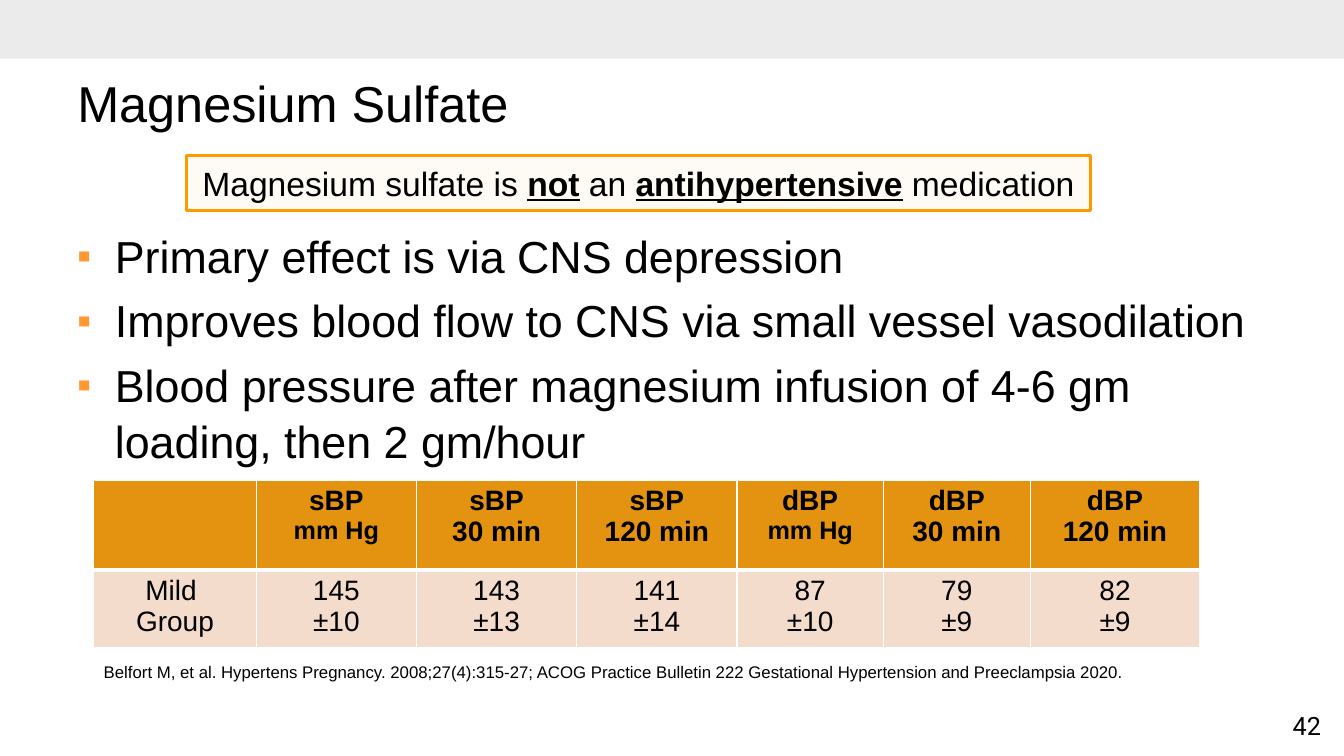
"""Build the Magnesium Sulfate slide."""
from typing import NamedTuple

from lxml import etree
from pptx import Presentation
from pptx.dml.color import RGBColor
from pptx.enum.shapes import MSO_SHAPE
from pptx.enum.text import MSO_ANCHOR, PP_ALIGN
from pptx.oxml.ns import qn
from pptx.util import Pt

RECT = MSO_SHAPE.RECTANGLE
MIDDLE = MSO_ANCHOR.MIDDLE
LEFT, CENTER = PP_ALIGN.LEFT, PP_ALIGN.CENTER

BLACK, WHITE = "000000", "FFFFFF"
BAND, CALLOUT_FILL, CALLOUT_LINE = "E3E3E3", "FEEDD0", "FF9900"
BULLET, HEAD_FILL, ROW_FILL = "FF9932", "E39310", "F4DCCC"


class Box(NamedTuple):
    left: float
    top: float
    width: float
    height: float

    def emu(self) -> list:
        """Return the four lengths as Pt values."""
        return [Pt(v) for v in self]


class Reading(NamedTuple):
    measure: str
    detail: str
    value: str
    spread: str
    width: float
    detail_size: float = 20


READINGS = [
    Reading("sBP", "mm Hg", "145", "±10", 114.5, 18),
    Reading("sBP", "30 min", "143", "±13", 114.5),
    Reading("sBP", "120 min", "141", "±14", 114.5),
    Reading("dBP", "mm Hg", "87", "±10", 104.5, 18),
    Reading("dBP", "30 min", "79", "±9", 105),
    Reading("dBP", "120 min", "82", "±9", 121),
]
POINTS = [
    "Primary effect is via CNS depression",
    "Improves blood flow to CNS via small vessel vasodilation",
    "Blood pressure after magnesium infusion of 4-6 gm loading, then 2 gm/hour",
]
CALLOUT = [("Magnesium sulfate is ", False), ("not", True), (" an ", False),
           ("antihypertensive", True), (" medication", False)]
CITATION = ("Belfort M, et al. Hypertens Pregnancy. 2008;27(4):315-27; ACOG Practice "
            "Bulletin 222 Gestational Hypertension and Preeclampsia 2020.")


def rgb(color: str) -> RGBColor:
    """Turn a hex string into a colour."""
    return RGBColor.from_string(color)


def add_run(p, text: str, *, size: float, font: str = "Arial", bold: bool = False,
            underline: bool = False) -> None:
    """Add a formatted run to a paragraph."""
    r = p.add_run()
    r.text = text
    r.font.name, r.font.size = font, Pt(size)
    r.font.bold, r.font.underline = bold, underline
    r.font.color.rgb = rgb(BLACK)


def add_text(s, box: Box, text: str, *, size: float, font: str = "Arial",
             align: PP_ALIGN = LEFT, wrap: bool = True) -> None:
    """Add a one-paragraph text box."""
    tf = s.shapes.add_textbox(*box.emu()).text_frame
    tf.word_wrap = wrap
    tf.paragraphs[0].alignment = align
    add_run(tf.paragraphs[0], text, size=size, font=font)


def add_rect(s, box: Box, fill: str, opacity: int, line: str | None = None):
    """Add a translucent rectangle."""
    sp = s.shapes.add_shape(RECT, *box.emu())
    sp.shadow.inherit = False
    sp.fill.solid()
    sp.fill.fore_color.rgb = rgb(fill)
    clr = sp.fill._xPr.find(qn("a:solidFill"))[0]
    etree.SubElement(clr, qn("a:alpha"), val=str(opacity * 1000))
    if line:
        sp.line.color.rgb = rgb(line)
        sp.line.width = Pt(2.25)
    else:
        sp.line.fill.background()
    return sp


def add_bullet(p) -> None:
    """Give a paragraph a hanging square bullet."""
    pPr = p._p.get_or_add_pPr()
    pPr.set("marL", str(Pt(27)))
    pPr.set("indent", str(-Pt(27)))
    clr = etree.SubElement(pPr, qn("a:buClr"))
    etree.SubElement(clr, qn("a:srgbClr"), val=BULLET)
    etree.SubElement(pPr, qn("a:buSzPct"), val="90000")
    etree.SubElement(pPr, qn("a:buFont"), typeface="Arial")
    etree.SubElement(pPr, qn("a:buChar"), char="▪")


def add_points(s, box: Box) -> None:
    """Add the bulleted list."""
    tf = s.shapes.add_textbox(*box.emu()).text_frame
    tf.word_wrap = True
    for i, text in enumerate(POINTS):
        p = tf.add_paragraph() if i else tf.paragraphs[0]
        add_bullet(p)
        p.line_spacing = 1.04
        p.space_before = Pt(6.4 if i else 0)
        add_run(p, text, size=32)


def fill_cell(cell, lines: list[tuple[str, float]], fill: str, *, bold: bool,
              bottom: float) -> None:
    """Set the borders, fill and centred lines of a table cell."""
    tcPr = cell._tc.get_or_add_tcPr()
    for side, width in (("L", 1), ("R", 1), ("T", 1), ("B", bottom)):
        ln = etree.SubElement(tcPr, qn(f"a:ln{side}"), w=str(Pt(width)))
        solid = etree.SubElement(ln, qn("a:solidFill"))
        etree.SubElement(solid, qn("a:srgbClr"), val=WHITE)
    cell.fill.solid()
    cell.fill.fore_color.rgb = rgb(fill)
    tf = cell.text_frame
    for i, (text, size) in enumerate(lines):
        p = tf.add_paragraph() if i else tf.paragraphs[0]
        p.alignment = CENTER
        add_run(p, text, size=size, bold=bold)


def add_readings(s, box: Box) -> None:
    """Add the blood pressure table."""
    table = s.shapes.add_table(2, len(READINGS) + 1, *box.emu()).table
    for row, height in zip(table.rows, (64, 52.6)):
        row.height = Pt(height)
    heads = [[]] + [[(d.measure, 20), (d.detail, d.detail_size)] for d in READINGS]
    values = [[("Mild ", 20), ("Group", 20)]]
    values += [[(d.value, 20), (d.spread, 20)] for d in READINGS]
    widths = [116] + [d.width for d in READINGS]
    for col, (head, value, width) in enumerate(zip(heads, values, widths)):
        table.columns[col].width = Pt(width)
        fill_cell(table.cell(0, col), head, HEAD_FILL, bold=True, bottom=3)
        fill_cell(table.cell(1, col), value, ROW_FILL, bold=False, bottom=1)


def add_callout(s, box: Box) -> None:
    """Add the framed statement."""
    tf = add_rect(s, box, CALLOUT_FILL, 20, CALLOUT_LINE).text_frame
    tf.word_wrap = True
    tf.vertical_anchor = MIDDLE
    p = tf.paragraphs[0]
    p.alignment = CENTER
    for text, strong in CALLOUT:
        add_run(p, text, size=24, bold=strong, underline=strong)


def set_title(s, box: Box, text: str) -> None:
    """Place and format the title placeholder."""
    title = s.shapes.title
    title.left, title.top, title.width, title.height = box.emu()
    tf = title.text_frame
    tf.vertical_anchor = MIDDLE
    tf.paragraphs[0].alignment = LEFT
    add_run(tf.paragraphs[0], text, size=36)


def main() -> None:
    """Build and save the slide."""
    prs = Presentation()
    prs.slide_width, prs.slide_height = Pt(960), Pt(540)
    s = prs.slides.add_slide(prs.slide_layouts[5])
    add_rect(s, Box(0, 0, 960, 42), BAND, 70)
    set_title(s, Box(48, 37, 816, 72), "Magnesium Sulfate")
    add_points(s, Box(48, 158, 864, 306))
    add_readings(s, Box(67, 343, 790, 116.6))
    add_text(s, Box(67, 469, 876, 22), CITATION, size=12)
    add_callout(s, Box(133, 111, 646, 39.5))
    add_text(s, Box(915, 504, 37, 29), "42", size=18, font="Roboto",
             align=CENTER, wrap=False)
    prs.save("out.pptx")


if __name__ == "__main__":
    main()
